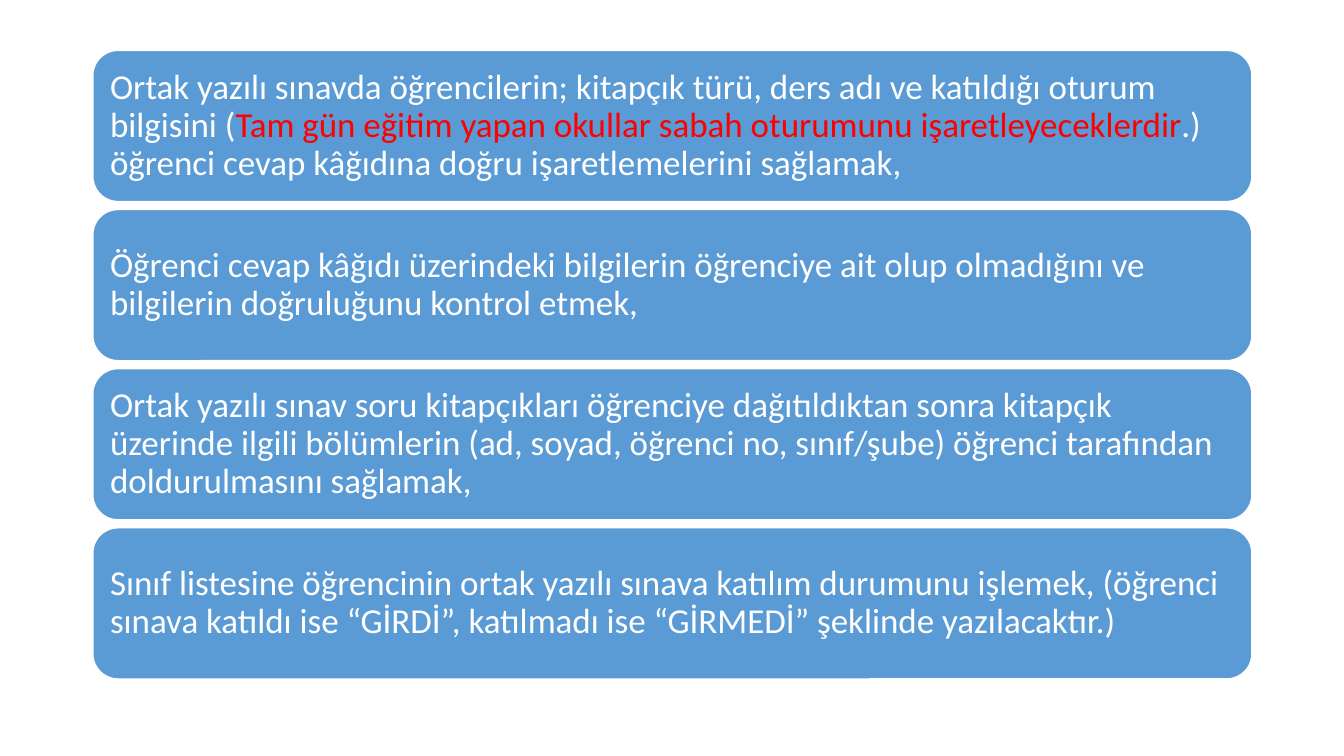
import pptx
import pptx.util
import pptx.dml.color
import pptx.enum.shapes
import pptx.enum.text

Cm = pptx.util.Cm
WHITE, BLUE, RED = "FFFFFF", "5B9BD5", "FF0000"

DUTIES = [
    [("Ortak yazılı sınavda öğrencilerin; kitapçık türü, ders adı ve katıldığı oturum bilgisini (", WHITE),
     ("Tam gün eğitim yapan okullar sabah oturumunu işaretleyeceklerdir", RED),
     (".) öğrenci cevap kâğıdına doğru işaretlemelerini sağlamak,", WHITE)],
    [("Öğrenci cevap kâğıdı üzerindeki bilgilerin öğrenciye ait olup olmadığını ve "
      "bilgilerin doğruluğunu kontrol etmek,", WHITE)],
    [("Ortak yazılı sınav soru kitapçıkları öğrenciye dağıtıldıktan sonra kitapçık "
      "üzerinde ilgili bölümlerin (ad, soyad, öğrenci no, sınıf/şube) öğrenci tarafından "
      "doldurulmasını sağlamak,", WHITE)],
    [("Sınıf listesine öğrencinin ortak yazılı sınava katılım durumunu işlemek, (öğrenci "
      "sınava katıldı ise “GİRDİ”, katılmadı ise “GİRMEDİ” şeklinde yazılacaktır.)", WHITE)],
]


def color(code):
    return pptx.dml.color.RGBColor.from_string(code)


class Page:
    """Draws styled elements on the current slide."""

    font = "Calibri"
    size = pptx.util.Pt(25)
    inset = Cm(0.25)

    def __init__(self, slide):
        self.slide = slide

    def card(self, left, top, width, height, parts):
        kind = pptx.enum.shapes.MSO_SHAPE.ROUNDED_RECTANGLE
        card = self.slide.shapes.add_shape(kind, Cm(left), Cm(top), Cm(width), Cm(height))
        card.shadow.inherit = False
        card.fill.solid()
        card.fill.fore_color.rgb = color(BLUE)
        card.line.color.rgb = color(WHITE)
        card.line.width = pptx.util.Pt(1)
        self.label(card.text_frame, parts)

    def label(self, frame, parts):
        frame.word_wrap = True
        frame.vertical_anchor = pptx.enum.text.MSO_ANCHOR.MIDDLE
        frame.margin_left = frame.margin_right = self.inset
        frame.margin_top = frame.margin_bottom = self.inset
        para = frame.paragraphs[0]
        para.alignment = pptx.enum.text.PP_ALIGN.LEFT
        para.line_spacing = 0.9
        for text, code in parts:
            run = para.add_run()
            run.text = text
            run.font.name = self.font
            run.font.size = self.size
            run.font.color.rgb = color(code)


def main():
    deck = pptx.Presentation()
    deck.slide_width, deck.slide_height = Cm(33.87), Cm(19.05)
    page = Page(deck.slides.add_slide(deck.slide_layouts[6]))
    left, top, width, height, gap = 2.34, 1.27, 29.21, 3.81, 0.2
    for row, parts in enumerate(DUTIES):
        page.card(left, top + row * (height + gap), width, height, parts)
    deck.save("out.pptx")


if __name__ == "__main__":
    main()
